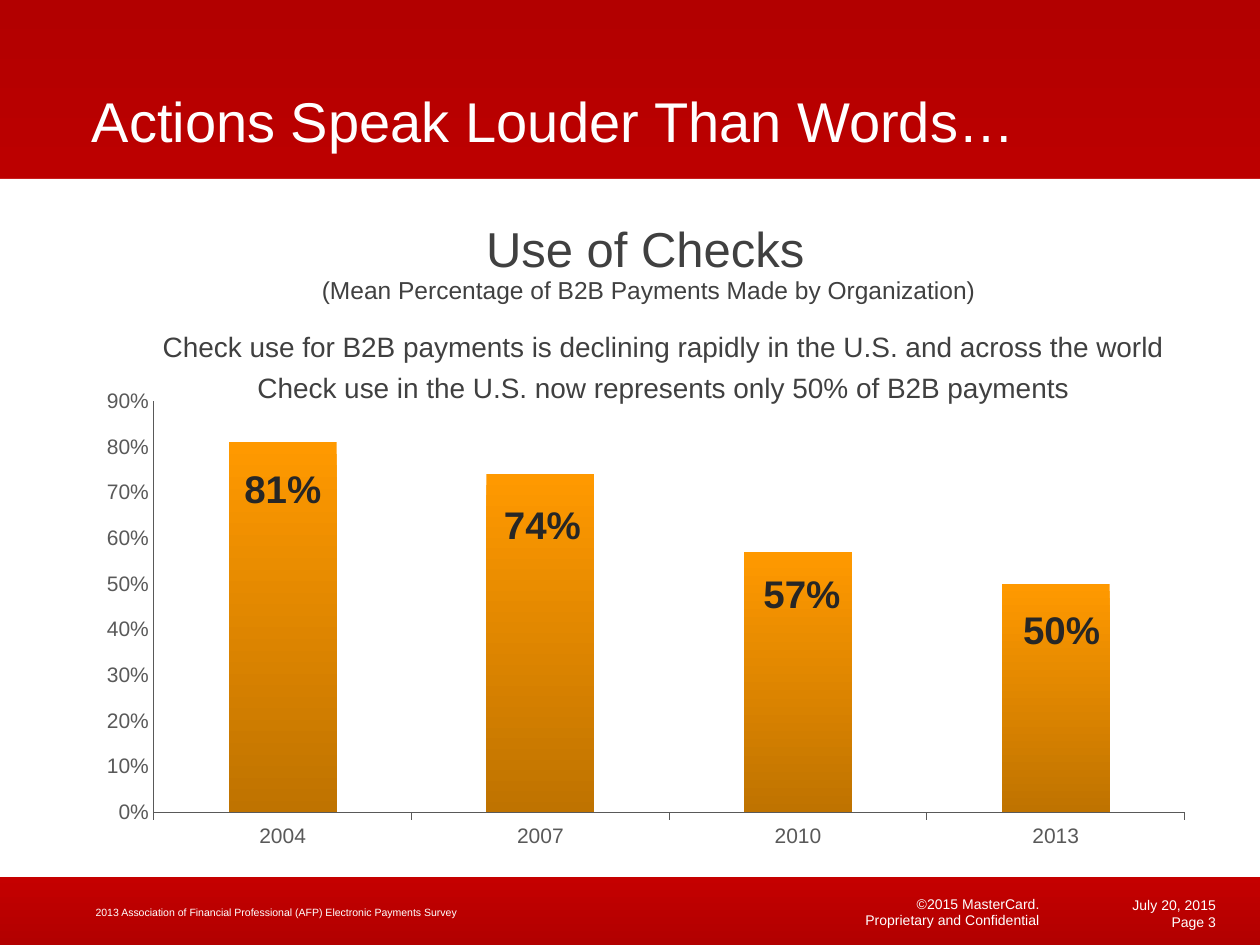
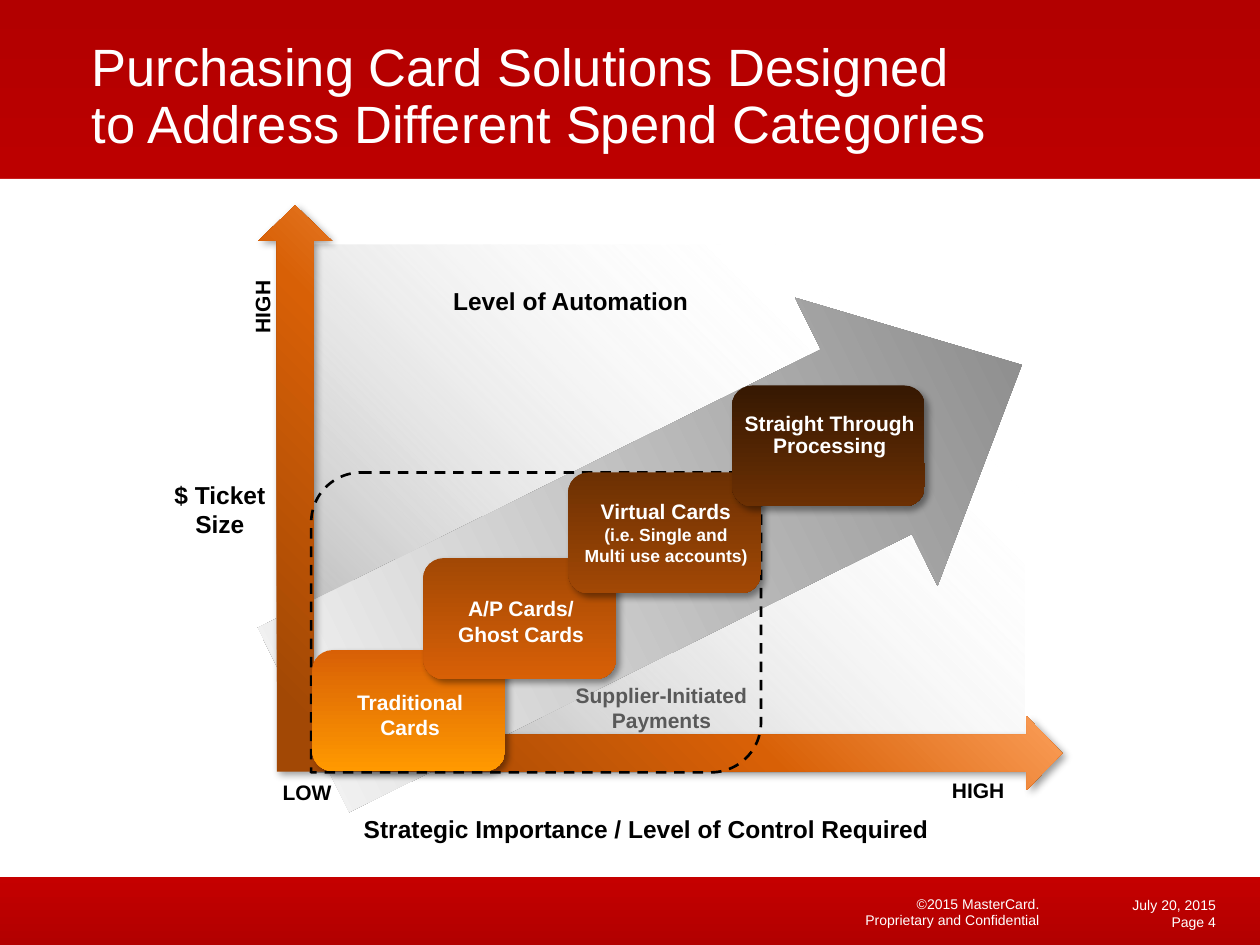
from lxml import etree
from pptx import Presentation
from pptx.chart.data import CategoryChartData
from pptx.dml.color import RGBColor
from pptx.enum.chart import XL_CHART_TYPE, XL_TICK_MARK
from pptx.enum.dml import MSO_LINE
from pptx.enum.shapes import MSO_SHAPE
from pptx.enum.text import MSO_ANCHOR, PP_ALIGN
from pptx.oxml.ns import qn
from pptx.util import Inches, Pt

FONT = "Arial"
WHITE = RGBColor(0xFF, 0xFF, 0xFF)
BLACK = RGBColor(0x00, 0x00, 0x00)
INK = RGBColor(0x26, 0x26, 0x26)
CHARCOAL = RGBColor(0x40, 0x40, 0x40)
SLATE = RGBColor(0x59, 0x59, 0x59)
GRAY = RGBColor(0x80, 0x80, 0x80)
SILVER = RGBColor(0xA6, 0xA6, 0xA6)
RED = RGBColor(0xB2, 0x00, 0x00)
BRIGHT_RED = RGBColor(0xE6, 0x00, 0x00)
AMBER = RGBColor(0xFF, 0x99, 0x00)
DARK_AMBER = RGBColor(0xBF, 0x73, 0x00)
PEACH = RGBColor(0xFA, 0x9D, 0x57)
ORANGE = RGBColor(0xD8, 0x60, 0x06)
RUST = RGBColor(0xA2, 0x48, 0x05)
BROWN = RGBColor(0x6C, 0x30, 0x03)
DARK_BROWN = RGBColor(0x36, 0x18, 0x02)

LEFT, CENTER, RIGHT = PP_ALIGN.LEFT, PP_ALIGN.CENTER, PP_ALIGN.RIGHT
TOP, MIDDLE, BOTTOM = MSO_ANCHOR.TOP, MSO_ANCHOR.MIDDLE, MSO_ANCHOR.BOTTOM
RECTANGLE, ROUNDED = MSO_SHAPE.RECTANGLE, MSO_SHAPE.ROUNDED_RECTANGLE
RIGHT_ARROW, CORNER_ARROW = MSO_SHAPE.RIGHT_ARROW, MSO_SHAPE.LEFT_UP_ARROW
DIAGONAL_ROUNDED = MSO_SHAPE.ROUND_2_DIAG_RECTANGLE
COLUMNS = XL_CHART_TYPE.COLUMN_CLUSTERED
TICK_NONE, TICK_OUTSIDE = XL_TICK_MARK.NONE, XL_TICK_MARK.OUTSIDE
DASH = MSO_LINE.DASH


def inches(*lengths):
    return [Inches(length) for length in lengths]


def set_gradient(fill, properties, stops, angle=None):
    """Without an angle the gradient spreads from the lower left corner."""
    fill.background()
    gradient = etree.Element(qn("a:gradFill"), rotWithShape="1")
    stop_list = etree.SubElement(gradient, qn("a:gsLst"))
    for position, color, *alpha in stops:
        stop = etree.SubElement(stop_list, qn("a:gs"), pos=str(position * 1000))
        tone = etree.SubElement(stop, qn("a:srgbClr"), val=str(color))
        if alpha:
            etree.SubElement(tone, qn("a:alpha"), val=str(alpha[0] * 1000))
    if angle is None:
        spread = etree.SubElement(gradient, qn("a:path"), path="circle")
        etree.SubElement(spread, qn("a:fillToRect"), t="100000", r="100000")
    else:
        etree.SubElement(gradient, qn("a:lin"), ang=str(angle * 60000), scaled="0")
    properties.replace(properties.find(qn("a:noFill")), gradient)


class SlideBuilder:
    def __init__(self):
        self.deck = Presentation()
        self.deck.slide_width, self.deck.slide_height = inches(10, 7.5)
        self.slide = None

    def start_slide(self, title, size, page_number):
        self.slide = self.deck.slides.add_slide(self.deck.slide_layouts[6])
        background = [(0, RED), (19, BRIGHT_RED), (100, RED)]
        self.shape(RECTANGLE, (0, 0, 10, 7.5), background, 270)
        body = self.shape(RECTANGLE, (0, 1.42, 10, 5.54))
        body.fill.solid()
        body.fill.fore_color.rgb = WHITE
        self.text((0.63, 0.21, 7.72, 1.07), [title], size, WHITE, anchor=BOTTOM, spacing=0.9)
        footer = dict(size=8, color=WHITE, align=RIGHT, margin=0)
        self.text((5.92, 7.08, 2.43, 0.33), ["©2015 MasterCard.\vProprietary and Confidential"],
                  anchor=MIDDLE, spacing=0.95, **footer)
        self.text((8.35, 7.25, 1.4, 0.18), [f"Page {page_number}"], **footer)
        self.text((8.35, 7.08, 1.4, 0.17), ["July 20, 2015"], anchor=BOTTOM, **footer)

    def shape(self, kind, place, stops=None, angle=None, rotation=0, adjustments=(), shadow=False):
        shape = self.slide.shapes.add_shape(kind, *inches(*place))
        shape.rotation = rotation
        for index, value in enumerate(adjustments):
            shape.adjustments[index] = value
        shape.line.fill.background()
        shape.shadow.inherit = False
        properties = shape.element.spPr
        if stops:
            set_gradient(shape.fill, properties, stops, angle)
        else:
            shape.fill.background()
        if shadow:
            outer = etree.SubElement(properties.find(qn("a:effectLst")), qn("a:outerShdw"),
                                     blurRad=str(Pt(4)), dist=str(Pt(3)), dir="2700000",
                                     algn="tl", rotWithShape="0")
            tone = etree.SubElement(outer, qn("a:srgbClr"), val=str(BLACK))
            etree.SubElement(tone, qn("a:alpha"), val="40000")
        return shape

    def text(self, place, lines, size, color, bold=False, align=LEFT, anchor=TOP,
             spacing=1.0, gap=0, margin=0.05, wrap=True, rotation=0):
        box = self.slide.shapes.add_textbox(*inches(*place))
        box.rotation = rotation
        frame = box.text_frame
        frame.word_wrap = wrap
        frame.vertical_anchor = anchor
        frame.margin_top = frame.margin_bottom = Inches(margin)
        for index, line in enumerate(lines):
            paragraph = frame.paragraphs[0] if index == 0 else frame.add_paragraph()
            paragraph.text = line
            paragraph.alignment = align
            paragraph.line_spacing = spacing
            if index:
                paragraph.space_before = Pt(gap)
            font = paragraph.font
            font.name, font.size, font.bold = FONT, Pt(size), bold
            font.color.rgb = color
        return box

    def column_chart(self, place, years, shares):
        data = CategoryChartData(number_format="0%")
        data.categories = years
        data.add_series("Series 1", shares)
        chart = self.slide.shapes.add_chart(COLUMNS, *inches(*place), data).chart
        chart.has_legend = chart.has_title = False
        chart.font.name, chart.font.size = FONT, Pt(12)
        chart.font.color.rgb = SLATE
        for axis, tick in ((chart.category_axis, TICK_OUTSIDE), (chart.value_axis, TICK_NONE)):
            axis.has_major_gridlines = False
            axis.major_tick_mark = tick
            axis.minor_tick_mark = TICK_NONE
            axis.format.line.color.rgb = SLATE
            axis.format.line.width = Pt(0.5)
        scale = chart.value_axis
        scale.minimum_scale, scale.maximum_scale, scale.major_unit = 0, 0.9, 0.1
        scale.tick_labels.number_format = "0%"
        scale.tick_labels.number_format_is_linked = False
        plot = chart.plots[0]
        plot.gap_width, plot.overlap, plot.vary_by_categories = 139, -27, False
        series = plot.series[0]
        fill = series.format.fill
        set_gradient(fill, series._element.spPr, [(0, AMBER), (100, DARK_AMBER)], 90)


def build_check_use(builder):
    builder.start_slide("Actions Speak Louder Than Words…", 32, 3)
    shares = [0.81, 0.74, 0.57, 0.5]
    builder.column_chart((0.67, 3.02, 8.91, 3.78), ["2004", "2007", "2010", "2013"], shares)
    heading = dict(color=CHARCOAL, align=CENTER, spacing=0.9, gap=6)
    builder.text((1.48, 1.74, 7.28, 0.4), ["Use of Checks"], 28, **heading)
    builder.text((1.51, 2.16, 7.28, 0.4),
                 ["(Mean Percentage of B2B Payments Made by Organization)"], 14, **heading)
    builder.text((1.06, 2.6, 8.41, 0.67), [
        "Check use for B2B payments is declining rapidly in the U.S. and across the world",
        "Check use in the U.S. now represents only 50% of B2B payments"], 16, **heading)
    for index, (share, top) in enumerate(zip(shares, (3.68, 3.97, 4.52, 4.8))):
        builder.text((1.81 + 2.06 * index, top, 0.87, 0.43), [f"{share:.0%}"], 22, INK,
                     bold=True, align=CENTER, spacing=0.9)
    builder.text((0.66, 7.15, 6.31, 0.19),
                 ["2013 Association of Financial Professional (AFP) Electronic Payments Survey"],
                 6, WHITE, spacing=0.9)


def build_card_solutions(builder):
    builder.start_slide("Purchasing Card Solutions Designed\vto Address Different Spend Categories",
                        30, 4)
    builder.shape(RECTANGLE, (2.46, 1.94, 5.67, 4.19), [(0, SILVER), (80, WHITE, 0)])
    builder.shape(RIGHT_ARROW, (2.08, 3.03, 6.36, 2.55), [(0, GRAY), (100, WHITE)], 180,
                  rotation=333.7, adjustments=(0.64, 0.54))
    builder.shape(CORNER_ARROW, (2.92, 0.76, 4.64, 6.38), [(8, RUST), (39, ORANGE), (63, PEACH)],
                  225, rotation=90, adjustments=(0.063, 0.063, 0.061), shadow=True)

    axis_title = dict(size=14, color=BLACK, bold=True, align=CENTER)
    builder.text((1.22, 3.76, 1.05, 0.57), ["$ Ticket Size"], **axis_title)
    builder.text((2.13, 6.41, 6, 0.34), ["Strategic Importance / Level of Control Required"],
                 **axis_title)
    builder.text((3.48, 2.22, 2.1, 0.34), ["Level of Automation"], wrap=False, **axis_title)
    axis_end = dict(size=12, color=BLACK, bold=True, align=RIGHT, wrap=False)
    builder.text((1.77, 2.29, 0.62, 0.3), ["HIGH"], rotation=270, **axis_end)
    builder.text((7.45, 6.12, 0.62, 0.3), ["HIGH"], **axis_end)
    builder.text((2.13, 6.14, 0.6, 0.3), ["LOW"], **axis_end)
    builder.text((4.46, 5.37, 1.58, 0.5), ["Supplier-Initiated", "Payments"], 12, SLATE,
                 bold=True, align=CENTER, wrap=False)

    supplier_area = builder.shape(DIAGONAL_ROUNDED, (2.47, 3.75, 3.57, 2.38))
    supplier_area.line.color.rgb = BLACK
    supplier_area.line.width = Pt(1.5)
    supplier_area.line.dash_style = DASH

    cards = [
        (2.48, 5.16, ORANGE, AMBER, 5.42, 1.0, ["Traditional", "Cards"]),
        (3.36, 4.43, RUST, ORANGE, 4.68, 1.0, ["A/P Cards/", "Ghost Cards"]),
        (4.51, 3.75, BROWN, RUST, 3.91, 1.0,
         ["Virtual Cards", "(i.e. Single and", "Multi use accounts)"]),
        (5.81, 3.06, DARK_BROWN, BROWN, 3.23, 0.9, ["Straight Through Processing"]),
    ]
    for left, top, upper, lower, label_top, spacing, lines in cards:
        builder.shape(ROUNDED, (left, top, 1.53, 0.96), [(0, upper), (100, lower)], 90, shadow=True)
        label = builder.text((left, label_top, 1.55, 0.5), lines, 12, WHITE, bold=True,
                             align=CENTER, spacing=spacing)
        for detail in label.text_frame.paragraphs[2 - 1:] if len(lines) == 3 else ():
            detail.font.size = Pt(10)


def main():
    builder = SlideBuilder()
    build_check_use(builder)
    build_card_solutions(builder)
    builder.deck.save("out.pptx")


if __name__ == "__main__":
    main()
